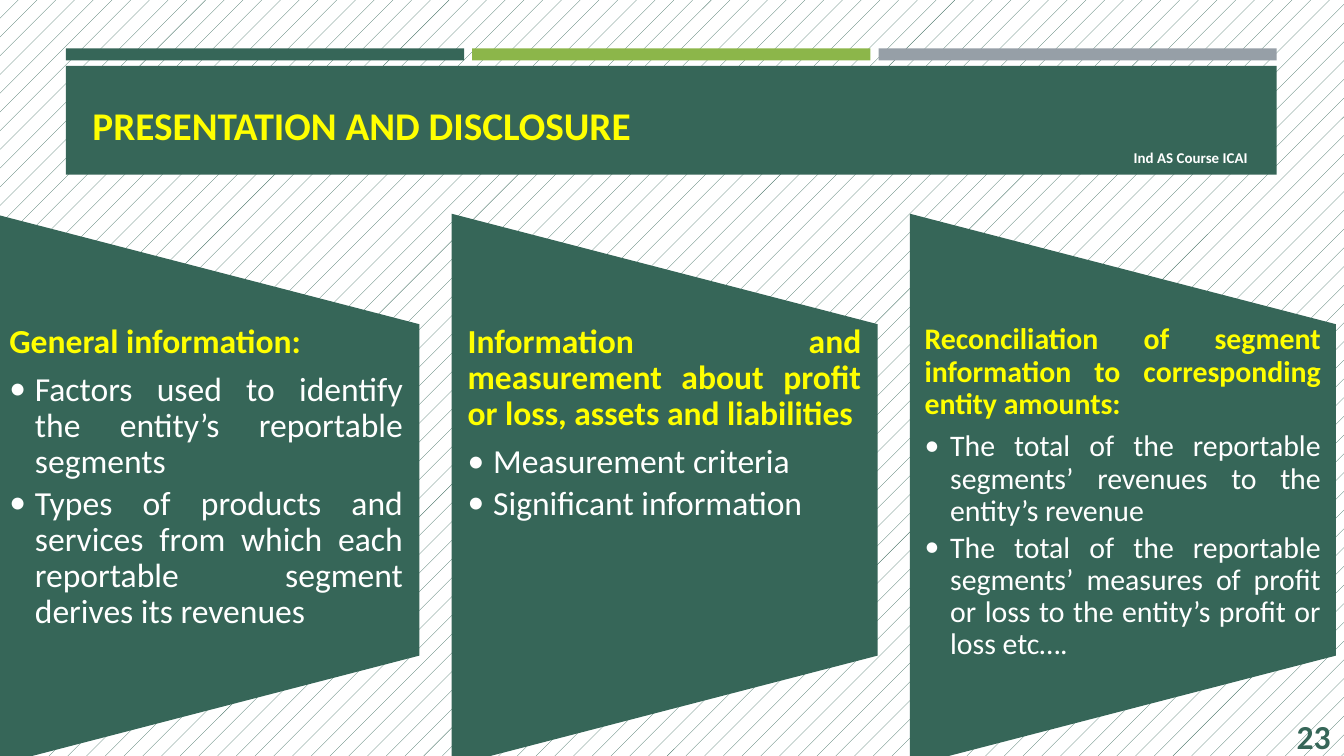
from lxml import etree
from pptx import Presentation
from pptx.dml.color import RGBColor
from pptx.enum.dml import MSO_PATTERN
from pptx.enum.shapes import MSO_SHAPE
from pptx.enum.text import MSO_ANCHOR, PP_ALIGN
from pptx.oxml.ns import qn
from pptx.util import Inches, Pt

FONT = "Calibri"
COLORS = {
    "green": "366658",
    "lime": "8CB64A",
    "grey": "969FA7",
    "yellow": "FFFF00",
    "white": "FFFFFF",
}
INDENT = 0.19

# heading, heading alignment, bullets, bullet alignment, text size, side inset
COLUMNS = [
    ("General information:", PP_ALIGN.LEFT,
     ["Factors used to identify the entity’s reportable segments",
      "Types of products and services from which each reportable segment "
      "derives its revenues"], PP_ALIGN.JUSTIFY, 18, 0.12),
    ("Information and measurement about profit or loss, assets and liabilities",
     PP_ALIGN.JUSTIFY,
     ["Measurement criteria", "Significant information"],
     PP_ALIGN.LEFT, 18, 0.12),
    ("Reconciliation of segment information to corresponding entity amounts:",
     PP_ALIGN.JUSTIFY,
     ["The total of the reportable segments’ revenues to the entity’s revenue",
      "The total of the reportable segments’ measures of profit or loss to the "
      "entity’s profit or loss etc…."], PP_ALIGN.JUSTIFY, 16, 0.11),
]


def rgb(name):
    return RGBColor.from_string(COLORS[name])


def add_block(page, left, top, width, height, color, kind=MSO_SHAPE.RECTANGLE):
    block = page.shapes.add_shape(
        kind, Inches(left), Inches(top), Inches(width), Inches(height))
    block.shadow.inherit = False
    block.fill.solid()
    block.fill.fore_color.rgb = rgb(color)
    block.line.fill.background()
    return block


def add_text_box(page, left, top, width, height, anchor=MSO_ANCHOR.MIDDLE):
    box = page.shapes.add_textbox(
        Inches(left), Inches(top), Inches(width), Inches(height))
    box.text_frame.word_wrap = True
    box.text_frame.vertical_anchor = anchor
    return box


def write(para, text, size, color, bold=False, align=PP_ALIGN.LEFT,
          bullet=False, line_spacing=None, space_after=None):
    if bullet:
        para.level = 1
        props = para._p.get_or_add_pPr()
        props.set("marL", str(Inches(INDENT)))
        props.set("indent", str(-Inches(INDENT)))
        etree.SubElement(props, qn("a:buFont")).set("typeface", FONT)
        etree.SubElement(props, qn("a:buChar")).set("char", "•")
    para.alignment = align
    if line_spacing:
        para.line_spacing = line_spacing
    if space_after:
        para.space_after = Pt(space_after)
    span = para.add_run()
    span.text = text
    span.font.name = FONT
    span.font.size = Pt(size)
    span.font.bold = bold
    span.font.color.rgb = rgb(color)


def add_header(page, left, top, width):
    gap = 0.06
    bar_width = (width - 2 * gap) / 3
    for index, color in enumerate(("green", "lime", "grey")):
        add_block(page, left + index * (bar_width + gap), top,
                  bar_width, 0.09, color)
    add_block(page, left, top + 0.13, width, 0.81, "green")

    label = add_block(page, left + 7.78, top + 0.76, 1.18, 0.11, "green")
    label.text_frame.vertical_anchor = MSO_ANCHOR.MIDDLE
    write(label.text_frame.paragraphs[0], "Ind AS Course ICAI", 8, "white",
          bold=True, align=PP_ALIGN.CENTER)

    title = add_text_box(page, left + 0.1, top + 0.19, 8.03, 0.75)
    write(title.text_frame.paragraphs[0], "PRESENTATION AND DISCLOSURE", 21,
          "yellow", bold=True, align=PP_ALIGN.JUSTIFY)


def add_column(page, left, top, width, height, column):
    """Draw a sideways trapezoid filling the box, with its text on top."""
    heading, heading_align, bullets, bullet_align, size, inset = column
    shift = (height - width) / 2
    panel = add_block(page, left - shift, top + shift, height, width, "green",
                      MSO_SHAPE.FLOWCHART_MANUAL_OPERATION)
    panel.rotation = 270

    box = add_text_box(page, left, top + height / 5, width, height * 0.6,
                       anchor=MSO_ANCHOR.TOP)
    frame = box.text_frame
    frame.margin_left = frame.margin_right = Inches(inset)
    frame.margin_top = frame.margin_bottom = 0
    write(frame.paragraphs[0], heading, size, "yellow", bold=True,
          align=heading_align, line_spacing=0.9, space_after=0.35 * size)
    for text in bullets:
        write(frame.add_paragraph(), text, size, "white", align=bullet_align,
              bullet=True, line_spacing=0.9, space_after=0.15 * size)


def add_page_number(page, left, top, width, height):
    box = add_text_box(page, left, top, width, height)
    write(box.text_frame.paragraphs[0], "23", 18, "green", bold=True,
          align=PP_ALIGN.RIGHT)


def main():
    deck = Presentation()
    deck.slide_width = Inches(10)
    deck.slide_height = deck.slide_width * 9 // 16
    page = deck.slides.add_slide(deck.slide_layouts[6])
    backdrop = page.background.fill
    backdrop.patterned()
    backdrop.pattern = MSO_PATTERN.PERCENT_5
    backdrop.fore_color.rgb = rgb("green")
    backdrop.back_color.rgb = rgb("white")

    add_header(page, 0.49, 0.36, 9.01)
    add_page_number(page, 9.16, 5.33, 0.84, 0.3)
    for index, column in enumerate(COLUMNS):
        add_column(page, -0.05 + index * 3.41, 1.59, 3.17, 4.11, column)
    deck.save("out.pptx")


if __name__ == "__main__":
    main()
